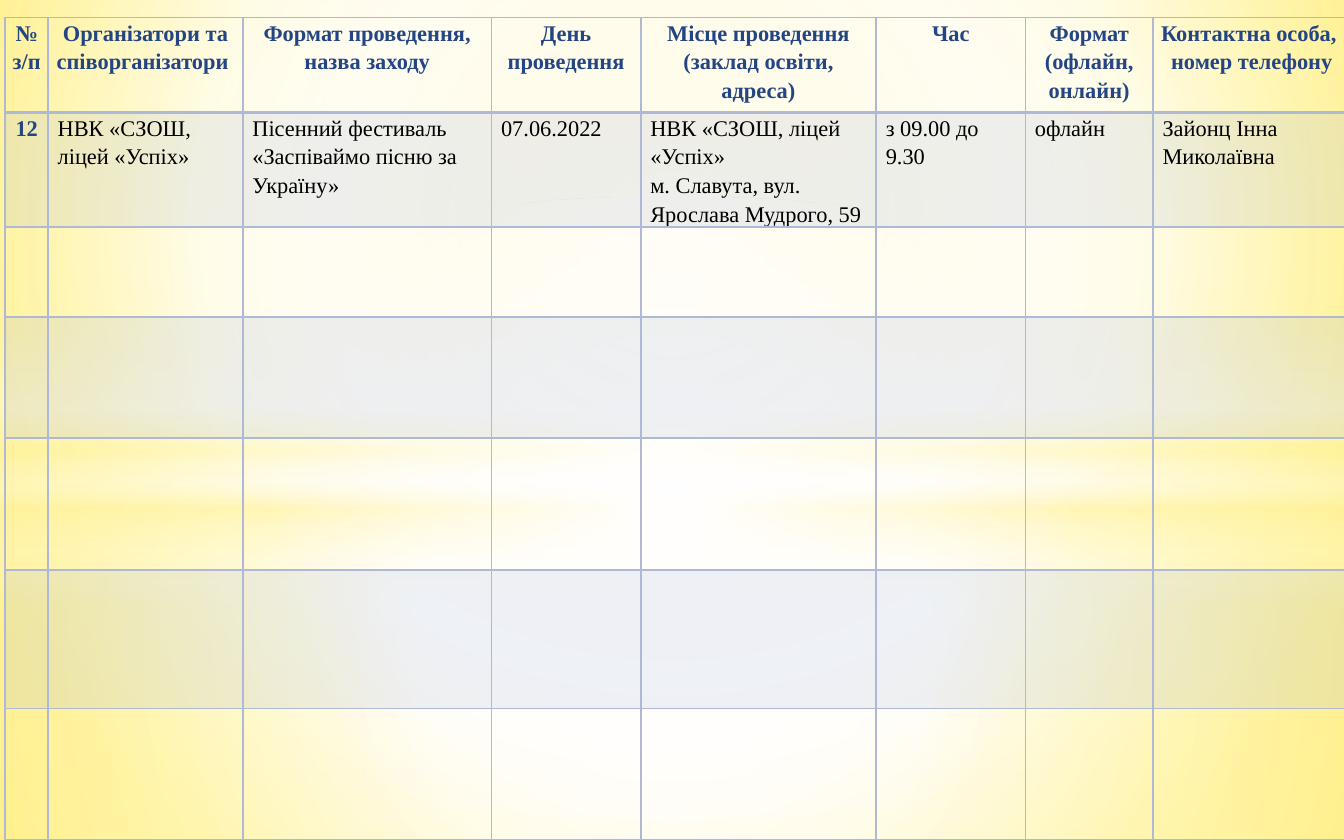
from lxml.etree import SubElement
from pptx import Presentation
from pptx.dml.color import RGBColor
from pptx.enum.shapes import MSO_SHAPE
from pptx.enum.text import PP_ALIGN
from pptx.oxml.ns import qn
from pptx.util import Cm, Pt

BLUE = RGBColor(0x24, 0x45, 0x83)
BLACK = RGBColor(0, 0, 0)
LINE = RGBColor(0xAE, 0xBA, 0xD5)
WHITE = RGBColor(0xFF, 0xFF, 0xFF)
CREAM = RGBColor(0xFF, 0xF3, 0x9D)
LEMON = RGBColor(0xFF, 0xF1, 0x8D)
GOLD = RGBColor(0xFF, 0xE9, 0x4E)

WIDE, HIGH, SPLIT = 25.4, 15.88, 8.94
MID = (50, 50, 50, 50)
COLS = [0.81, 3.68, 4.7, 2.82, 4.45, 2.82, 2.41, 3.63]
ROWS = [1.8, 1.8, 1.7, 2.29, 2.49, 2.62, 2.49]
HEAD = [
    "№\nз/п",
    "Організатори та співорганізатори ",
    "Формат проведення, назва заходу",
    "День проведення",
    "Місце проведення\n(заклад освіти, адреса)",
    "Час",
    "Формат\n(офлайн, онлайн)",
    "Контактна особа,\n номер телефону",
]
EVENT = [
    "12",
    "НВК «СЗОШ, ліцей «Успіх»",
    "Пісенний фестиваль «Заспіваймо пісню за Україну»",
    "07.06.2022",
    "НВК «СЗОШ, ліцей «Успіх»\nм. Славута, вул. Ярослава Мудрого, 59",
    "з 09.00 до 9.30",
    "офлайн",
    "Зайонц Інна Миколаївна",
]


def write(frame, text, size=12, font="Times New Roman", color=BLACK,
          bold=False, align=PP_ALIGN.LEFT, space=1.15):
    for i, line in enumerate(text.split("\n")):
        para = frame.add_paragraph() if i else frame.paragraphs[0]
        para.alignment, para.line_spacing = align, space
        run = para.add_run()
        run.text = line
        run.font.size, run.font.name = Pt(size), font
        run.font.bold, run.font.color.rgb = bold, color


def tint(node, color, alpha=100):
    tone = SubElement(node, qn("a:srgbClr"), val=str(color))
    if alpha < 100:
        SubElement(tone, qn("a:alpha"), val=str(alpha * 1000))


def blend(root, stops, focus=None):
    grad = next(root.iter(qn("a:gradFill")))
    grad.clear()
    grad.set("rotWithShape", "1")
    group = SubElement(grad, qn("a:gsLst"))
    for pos, color, alpha in stops:
        tint(SubElement(group, qn("a:gs"), pos=str(pos * 1000)), color, alpha)
    if focus:
        ring = SubElement(grad, qn("a:path"), path="circle")
        sides = {s: str(v * 1000) for s, v in zip("ltrb", focus)}
        SubElement(ring, qn("a:fillToRect"), sides)
    else:
        SubElement(grad, qn("a:lin"), ang="5400000", scaled="0")


class Board:
    def __init__(self, deck):
        self.slide = deck.slides.add_slide(deck.slide_layouts[6])
        self.line = LINE
        self.fade = 20

    def back(self, stops, focus):
        fill = self.slide.background.fill
        fill.gradient()
        blend(self.slide.element, stops, focus)

    def glow(self, kind, top, high, stops, focus=None):
        shape = self.slide.shapes.add_shape(kind, 0, Cm(top), Cm(WIDE), Cm(high))
        shape.shadow.inherit = False
        shape.line.fill.background()
        shape.fill.gradient()
        blend(shape.element, stops, focus)

    def edge(self, cell, low):
        props = cell._tc.get_or_add_tcPr()
        for side in "LRTB":
            width = low if side == "B" else 1
            line = SubElement(props, qn("a:ln" + side), w=str(Pt(width)))
            tint(SubElement(line, qn("a:solidFill")), self.line)

    def shade(self, cell, banded):
        if banded:
            cell.fill.solid()
            cell.fill.fore_color.rgb = self.line
            tone = next(cell._tc.tcPr.find(qn("a:solidFill")).iter(qn("a:srgbClr")))
            SubElement(tone, qn("a:alpha"), val=str(self.fade * 1000))
        else:
            cell.fill.background()

    def table(self, left, top, cols, rows, texts):
        frame = self.slide.shapes.add_table(
            len(rows), len(cols), Cm(left), Cm(top), Cm(sum(cols)), Cm(sum(rows)))
        grid = frame.table
        grid.first_row = grid.horz_banding = False
        for col, width in zip(grid.columns, cols):
            col.width = Cm(width)
        for r, high in enumerate(rows):
            grid.rows[r].height = Cm(high)
            for c in range(len(cols)):
                cell = grid.cell(r, c)
                self.edge(cell, 1 if r else 2)
                self.shade(cell, r % 2)
                if r < len(texts):
                    self.fill(cell, texts[r][c], r == 0 or c == 0)

    def fill(self, cell, text, strong):
        cell.margin_left = cell.margin_right = Cm(0.13 if strong else 0.18)
        cell.margin_top = cell.margin_bottom = 0
        look = dict(color=BLUE, bold=True, align=PP_ALIGN.CENTER) if strong else {}
        write(cell.text_frame, text, **look)


def main():
    deck = Presentation()
    deck.slide_width, deck.slide_height = Cm(WIDE), Cm(HIGH)
    board = Board(deck)
    board.back([(0, LEMON, 100), (60, WHITE, 100), (100, GOLD, 100)],
               (20, 10, 20, 60))
    board.glow(MSO_SHAPE.RECTANGLE, SPLIT, HIGH - SPLIT,
               [(0, WHITE, 91), (37, WHITE, 76), (100, CREAM, 79)], MID)
    board.glow(MSO_SHAPE.RECTANGLE, 0, SPLIT,
               [(0, WHITE, 89), (48, WHITE, 62), (100, CREAM, 79)], MID)
    board.glow(MSO_SHAPE.RECTANGLE, 6.15, 5.28,
               [(0, WHITE, 0), (29, WHITE, 30), (45, CREAM, 40),
                (55, WHITE, 26), (65, CREAM, 60), (100, WHITE, 0)])
    board.glow(MSO_SHAPE.OVAL, 3.71, 11.81,
               [(0, WHITE, 100), (54, WHITE, 0)], MID)
    board.table(0.1, 0.33, COLS, ROWS, [HEAD, EVENT])
    deck.save("out.pptx")


if __name__ == "__main__":
    main()
